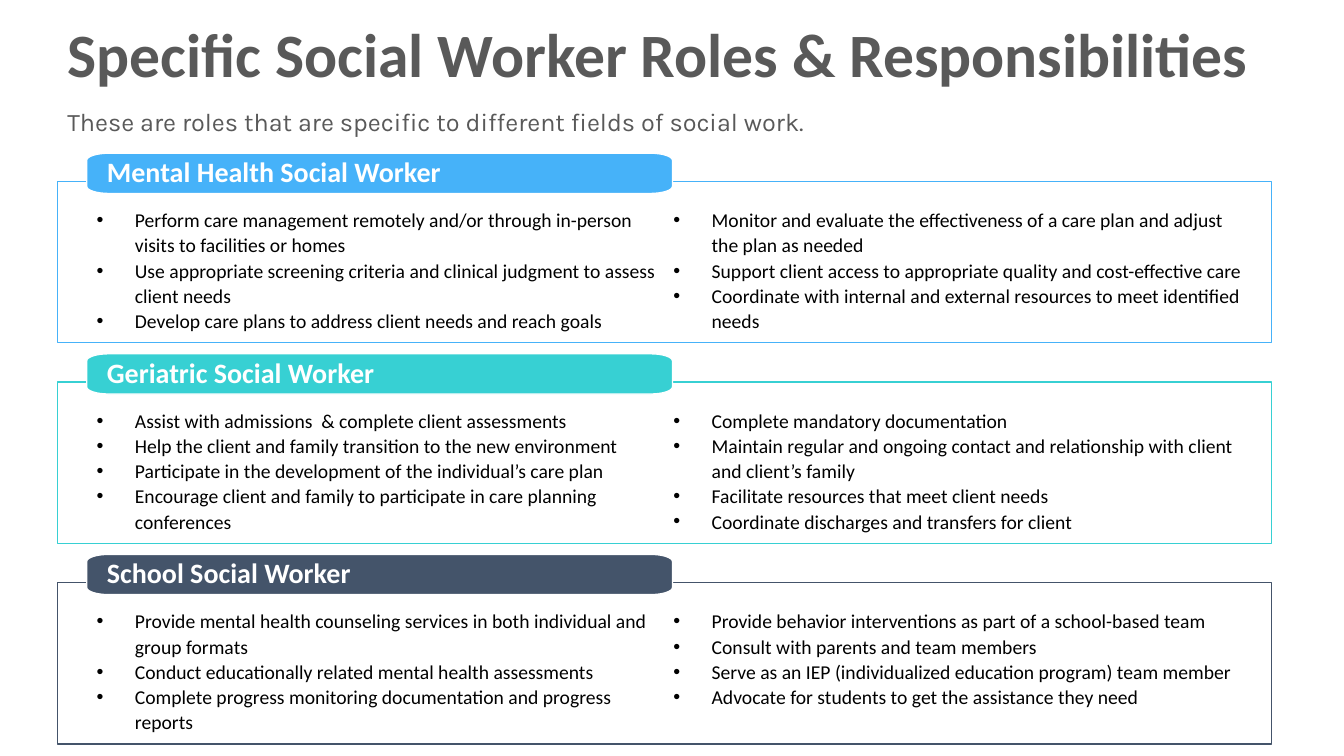
import math

from lxml import etree
from pptx import Presentation
from pptx.dml.color import RGBColor
from pptx.enum.text import MSO_ANCHOR, MSO_AUTO_SIZE, PP_ALIGN
from pptx.oxml.ns import qn
from pptx.util import Inches, Pt

MIDDLE, TOP = MSO_ANCHOR.MIDDLE, MSO_ANCHOR.TOP
LEFT = PP_ALIGN.LEFT
NO_FIT = MSO_AUTO_SIZE.NONE
TITLE_ONLY = 5

COLORS = {
    "white": "FFFFFF",
    "black": "000000",
    "heading": "595959",
    "mental": "46B2F9",
    "geriatric": "37D0D3",
    "school": "44546A",
}

SECTIONS = [
    ("Mental Health Social Worker", "mental", [
        "Perform care management remotely and/or through in-person visits to facilities or homes",
        "Use appropriate screening criteria and clinical judgment to assess client needs",
        "Develop care plans to address client needs and reach goals",
    ], [
        "Monitor and evaluate the effectiveness of a care plan and adjust the plan as needed",
        "Support client access to appropriate quality and cost-effective care",
        "Coordinate with internal and external resources to meet identified needs",
    ]),
    ("Geriatric Social Worker", "geriatric", [
        "Assist with admissions  & complete client assessments",
        "Help the client and family transition to the new environment",
        "Participate in the development of the individual’s care plan",
        "Encourage client and family to participate in care planning conferences",
    ], [
        "Complete mandatory documentation",
        "Maintain regular and ongoing contact and relationship with client and client’s family",
        "Facilitate resources that meet client needs",
        "Coordinate discharges and transfers for client",
    ]),
    ("School Social Worker", "school", [
        "Provide mental health counseling services in both individual and group formats",
        "Conduct educationally related mental health assessments",
        "Complete progress monitoring documentation and progress reports",
    ], [
        "Provide behavior interventions as part of a school-based team",
        "Consult with parents and team members",
        "Serve as an IEP (individualized education program) team member",
        "Advocate for students to get the assistance they need",
    ]),
]

FIRST_TAB_TOP, SECTION_PITCH = 1.52, 1.99
PANEL_LEFT, PANEL_WIDTH, PANEL_HEIGHT, PANEL_DROP = 0.57, 12.04, 1.6, 0.28
TAB_LEFT, TAB_WIDTH, TAB_HEIGHT = 0.86, 5.81, 0.4
CORNER_WIDTH, CORNER_HEIGHT, CORNER_STEPS = 0.22, 0.07, 8
DUTIES_DROP, DUTIES_HEIGHT = 0.48, 1.5
COLUMN_WIDTH, COLUMN_PITCH = 5.92, 5.72
BULLET_INDENT = 0.38


def rgb(name):
    return RGBColor.from_string(COLORS[name])


def add_bullet(paragraph):
    props = paragraph._p.get_or_add_pPr()
    props.set("marL", str(Inches(BULLET_INDENT)))
    props.set("indent", str(-Inches(BULLET_INDENT)))
    etree.SubElement(props, qn("a:buFont")).set("typeface", "Arial")
    etree.SubElement(props, qn("a:buChar")).set("char", "•")


def write(shape, lines, *, size, color, font="Calibri", bold=False,
          spacing=1.0, anchor=TOP, inset=0.1, bullets=False):
    """Fill a shape with one formatted paragraph per line."""
    frame = shape.text_frame
    frame.word_wrap = True
    frame.auto_size = NO_FIT
    frame.vertical_anchor = anchor
    frame.margin_left = frame.margin_right = Inches(inset)
    frame.margin_top = frame.margin_bottom = Inches(0.05)
    frame.text = "\n".join(lines)
    for paragraph in frame.paragraphs:
        paragraph.alignment = LEFT
        paragraph.line_spacing = spacing
        paragraph.space_before = paragraph.space_after = Pt(0)
        if bullets:
            add_bullet(paragraph)
        run_font = paragraph.runs[0].font
        run_font.name, run_font.size, run_font.bold = font, Pt(size), bold
        run_font.color.rgb = rgb(color)


def paint(shape, fill, line):
    shape.shadow.inherit = False
    shape.fill.solid()
    shape.fill.fore_color.rgb = rgb(fill)
    shape.line.color.rgb = rgb(line)
    shape.line.width = Pt(1)


def add_text(slide, lines, left, top, width, height, **text_format):
    box = slide.shapes.add_textbox(Inches(left), Inches(top), Inches(width), Inches(height))
    write(box, lines, **text_format)


def add_panel(slide, top, color):
    panel = slide.shapes.add_shape(
        1, Inches(PANEL_LEFT), Inches(top), Inches(PANEL_WIDTH), Inches(PANEL_HEIGHT))
    paint(panel, "white", color)
    fill_color = panel._element.spPr.find(qn("a:solidFill"))[0]
    etree.SubElement(fill_color, qn("a:alpha")).set("val", "90000")


def tab_outline(top):
    """Points of a bar whose corners are quarter ellipses, clockwise from the left edge."""
    near_x, far_x = TAB_LEFT + CORNER_WIDTH, TAB_LEFT + TAB_WIDTH - CORNER_WIDTH
    near_y, far_y = top + CORNER_HEIGHT, top + TAB_HEIGHT - CORNER_HEIGHT
    centers = [(near_x, near_y), (far_x, near_y), (far_x, far_y), (near_x, far_y)]
    points = []
    for quarter, (x, y) in enumerate(centers):
        for step in range(CORNER_STEPS + 1):
            angle = math.pi + (quarter + step / CORNER_STEPS) * math.pi / 2
            points.append((Inches(x + CORNER_WIDTH * math.cos(angle)),
                           Inches(y + CORNER_HEIGHT * math.sin(angle))))
    return points


def add_tab(slide, name, top, color):
    start, *others = tab_outline(top)
    builder = slide.shapes.build_freeform(*start)
    builder.add_line_segments(others, close=True)
    tab = builder.convert_to_shape()
    paint(tab, color, "white")
    write(tab, [name], size=20, color="white", bold=True,
          spacing=0.9, anchor=MIDDLE, inset=0.2)


def add_section(slide, top, name, color, *columns):
    add_panel(slide, top + PANEL_DROP, color)
    add_tab(slide, name, top, color)
    for index, duties in enumerate(columns):
        add_text(slide, duties, TAB_LEFT + index * COLUMN_PITCH, top + DUTIES_DROP,
                 COLUMN_WIDTH, DUTIES_HEIGHT, size=14, color="black",
                 spacing=1.07, bullets=True)


def add_title(slide, text):
    title = slide.shapes.title
    title.left, title.top = Inches(0.57), Inches(0.01)
    title.width, title.height = Inches(12.04), Inches(1.12)
    write(title, [text], size=44, color="heading", bold=True, spacing=0.9, anchor=MIDDLE)


def main():
    deck = Presentation()
    deck.slide_width, deck.slide_height = Inches(13.33), Inches(7.5)
    slide = deck.slides.add_slide(deck.slide_layouts[TITLE_ONLY])
    add_title(slide, "Specific Social Worker Roles & Responsibilities")
    add_text(slide, ["These are roles that are specific to different fields of social work."],
             0.57, 1.01, 12.36, 0.4, size=18, color="heading", font="Karla")
    for index, section in enumerate(SECTIONS):
        add_section(slide, FIRST_TAB_TOP + index * SECTION_PITCH, *section)
    deck.save("out.pptx")


if __name__ == "__main__":
    main()
